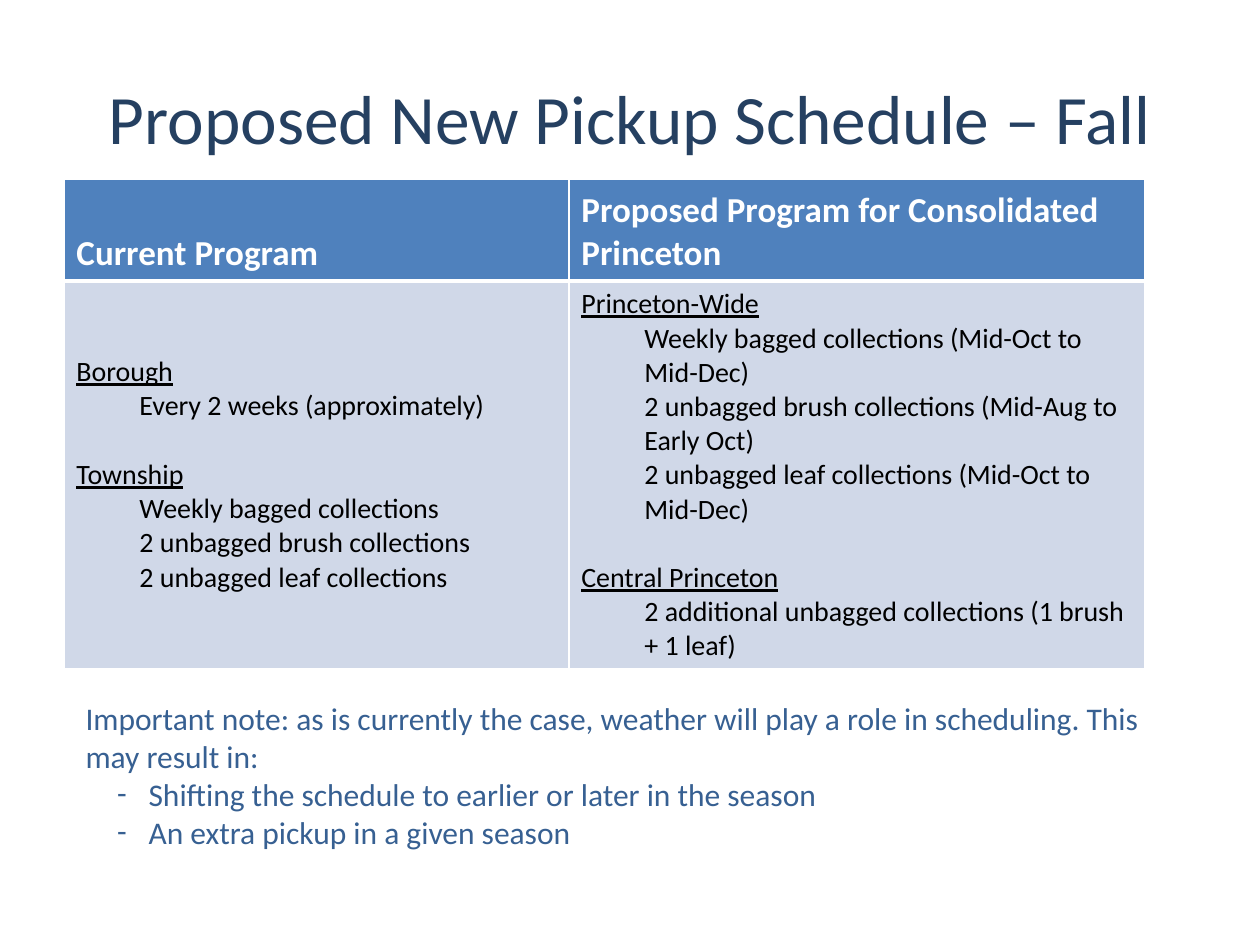
from lxml import etree
from pptx import Presentation
from pptx.dml.color import RGBColor
from pptx.enum.text import MSO_ANCHOR, PP_ALIGN
from pptx.oxml.ns import qn
from pptx.util import Pt

MIDDLE, BOTTOM = MSO_ANCHOR.MIDDLE, MSO_ANCHOR.BOTTOM
CENTER = PP_ALIGN.CENTER
FONT = "Calibri"
INDENT = 36
GROUP_GAP = 19.5

HEADERS = ["Current Program", "Proposed Program for Consolidated Princeton"]
PROGRAMS = [
    [
        ("Borough", ["Every 2 weeks (approximately)"]),
        ("Township", ["Weekly bagged collections",
                      "2 unbagged brush collections",
                      "2 unbagged leaf collections"]),
    ],
    [
        ("Princeton-Wide", ["Weekly bagged collections (Mid-Oct to Mid-Dec)",
                            "2 unbagged brush collections (Mid-Aug to Early Oct)",
                            "2 unbagged leaf collections (Mid-Oct to Mid-Dec)"]),
        ("Central Princeton", ["2 additional unbagged collections (1 brush + 1 leaf)"]),
    ],
]
NOTE = ("Important note: as is currently the case, weather will play a role "
        "in scheduling. This may result in:")
EFFECTS = ["Shifting the schedule to earlier or later in the season",
           "An extra pickup in a given season"]


def rgb(color):
    return RGBColor.from_string(color)


def write(p, text, size, color, bold=False, underline=False):
    p.text = text
    for r in p.runs:
        r.font.name = FONT
        r.font.size = Pt(size)
        r.font.color.rgb = rgb(color)
        r.font.bold = bold
        r.font.underline = underline


def next_paragraph(tf):
    return tf.add_paragraph() if tf.text else tf.paragraphs[0]


def indent(p, hanging=0, bullet=None):
    p.level = 1
    pPr = p._p.get_or_add_pPr()
    pPr.set("marL", str(Pt(INDENT)))
    pPr.set("indent", str(-Pt(hanging)))
    if bullet:
        etree.SubElement(pPr, qn("a:buFont"), typeface=FONT)
        etree.SubElement(pPr, qn("a:buChar"), char=bullet)


def set_borders(cell, color, widths):
    tcPr = cell._tc.get_or_add_tcPr()
    for i, (side, width) in enumerate(zip("LRTB", widths)):
        ln = etree.Element(qn(f"a:ln{side}"), w=str(Pt(width)))
        fill = etree.SubElement(ln, qn("a:solidFill"))
        etree.SubElement(fill, qn("a:srgbClr"), val=color)
        tcPr.insert(i, ln)


def style_cell(cell, color, anchor, widths):
    cell.fill.solid()
    cell.fill.fore_color.rgb = rgb(color)
    cell.vertical_anchor = anchor
    set_borders(cell, "FFFFFF", widths)


def add_text_box(s, x, y, w, h):
    tf = s.shapes.add_textbox(Pt(x), Pt(y), Pt(w), Pt(h)).text_frame
    tf.word_wrap = True
    return tf


def add_title(s, x, y, w, h):
    tf = add_text_box(s, x, y, w, h)
    tf.vertical_anchor = MIDDLE
    p = tf.paragraphs[0]
    write(p, "Proposed New Pickup Schedule – Fall", 39.6, "254061")
    p.alignment = CENTER


def fill_program(tf, groups):
    for i, (area, pickups) in enumerate(groups):
        p = next_paragraph(tf)
        write(p, area, 16, "000000", underline=True)
        if i:
            p.space_before = Pt(GROUP_GAP)
        for pickup in pickups:
            p = next_paragraph(tf)
            write(p, pickup, 16, "000000")
            indent(p)


def add_schedule(s, x, y, w, h):
    header_h, first_w = 58.3, w * 0.467
    table = s.shapes.add_table(2, 2, Pt(x), Pt(y), Pt(w), Pt(h)).table
    for column, width in zip(table.columns, (first_w, w - first_w)):
        column.width = Pt(width)
    for row, height in zip(table.rows, (header_h, h - header_h)):
        row.height = Pt(height)
    for i, (header, groups) in enumerate(zip(HEADERS, PROGRAMS)):
        head, body = table.cell(0, i), table.cell(1, i)
        write(head.text_frame.paragraphs[0], header, 20, "FFFFFF", bold=True)
        style_cell(head, "4F81BD", BOTTOM, (1, 1, 1, 3))
        fill_program(body.text_frame, groups)
        style_cell(body, "D0D8E8", MIDDLE, (1, 1, 3, 1))


def add_note(s, x, y, w, h):
    tf = add_text_box(s, x, y, w, h)
    write(tf.paragraphs[0], NOTE, 18, "376092")
    for effect in EFFECTS:
        p = next_paragraph(tf)
        write(p, effect, 18, "376092")
        indent(p, hanging=18, bullet="-")


def main():
    prs = Presentation()
    prs.slide_width, prs.slide_height = Pt(720), Pt(540)
    s = prs.slides.add_slide(prs.slide_layouts[6])
    add_title(s, 36, 21.6, 648, 90)
    add_schedule(s, 36.5, 102.2, 617.8, 280)
    add_note(s, 41.8, 396, 624, 94.5)
    prs.save("out.pptx")


if __name__ == "__main__":
    main()
